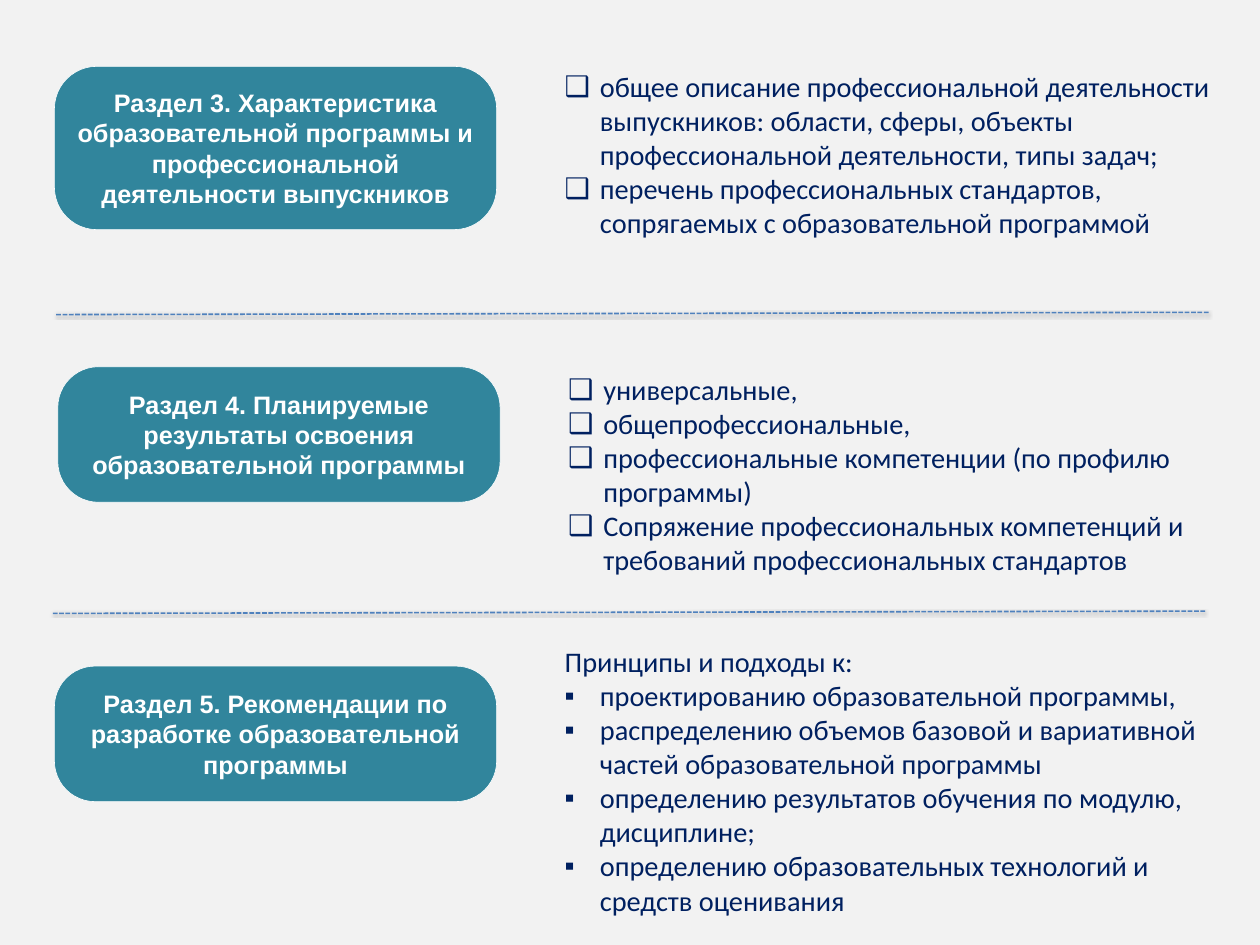
from pptx import Presentation
from pptx.dml.color import RGBColor
from pptx.enum.dml import MSO_LINE_DASH_STYLE as Dash
from pptx.enum.shapes import MSO_CONNECTOR as Connector, MSO_SHAPE as Shape
from pptx.enum.text import MSO_ANCHOR as Anchor, MSO_AUTO_SIZE as AutoSize, PP_ALIGN as Align
from pptx.oxml import parse_xml
from pptx.oxml.ns import nsdecls
from pptx.util import Inches, Pt

WIDTH, HEIGHT = Inches(22.22), Inches(16.67)
CARD_WIDTH, LIST_OFFSET = 35.1, 40.05
LINE_WIDTH, LINE_RISE = 91.5, 0.24
INDENT = Inches(0.62)

SECTIONS = [
    dict(
        title="Раздел 3. Характеристика образовательной программы и "
              "профессиональной деятельности выпускников",
        left=4.32, card_top=7.02, card_height=17.28, corner=0.26,
        holder=1, list_top=7.02, list_width=52.12, list_height=22.44,
        bullet="❑", intro=None,
        items=[
            "общее описание профессиональной деятельности выпускников: области, "
            "сферы, объекты профессиональной деятельности, типы задач;",
            "перечень профессиональных стандартов, сопрягаемых с образовательной программой",
        ],
    ),
    dict(
        title="Раздел 4. Планируемые результаты освоения образовательной программы",
        left=4.59, card_top=38.81, card_height=14.34, corner=0.3,
        holder=2, list_top=39.11, list_width=53.51, list_height=22.44,
        bullet="❑", intro=None,
        items=[
            "универсальные,",
            "общепрофессиональные,",
            "профессиональные компетенции (по профилю программы)",
            "Сопряжение профессиональных компетенций и требований профессиональных стандартов",
        ],
    ),
    dict(
        title="Раздел 5. Рекомендации по разработке образовательной программы",
        left=4.32, card_top=70.49, card_height=14.34, corner=0.3,
        holder=4, list_top=67.91, list_width=53.51, list_height=29.69,
        bullet="▪", intro="Принципы и подходы к:",
        items=[
            "проектированию образовательной программы,",
            "распределению объемов базовой и вариативной частей образовательной программы",
            "определению результатов обучения по модулю, дисциплине;",
            "определению образовательных технологий и средств оценивания",
        ],
    ),
]
DIVIDERS = [(4.46, 33.29), (4.19, 64.91)]


def across(share):
    return round(WIDTH * share / 100)


def down(share):
    return round(HEIGHT * share / 100)


def paint(color_format, color):
    color_format.rgb = RGBColor.from_string(color)


def fill_solid(fill, color):
    fill.solid()
    paint(fill.fore_color, color)


def add_text(para, text, font_name, size, color, bold):
    span = para.add_run()
    span.text = text
    span.font.name = font_name
    span.font.size = Pt(size)
    span.font.bold = bold
    paint(span.font.color, color)


def set_bullet(para, bullet):
    properties = para._p.get_or_add_pPr()
    properties.set("marL", str(INDENT if bullet else 0))
    properties.set("indent", str(-INDENT if bullet else 0))
    mark = f'a:buChar {nsdecls("a")} char="{bullet}"' if bullet else f'a:buNone {nsdecls("a")}'
    para.space_before = Pt(0)
    properties.append(parse_xml(f"<{mark}/>"))


def add_card(page, section):
    card = page.shapes.add_shape(
        Shape.ROUNDED_RECTANGLE, across(section["left"]), down(section["card_top"]),
        across(CARD_WIDTH), down(section["card_height"]))
    card.adjustments[0] = section["corner"]
    card.shadow.inherit = False
    fill_solid(card.fill, "31859C")
    fill_solid(card.line.fill, "FFFFFF")
    card.line.width = Pt(0.75)
    frame = card.text_frame
    frame.word_wrap = True
    frame.vertical_anchor = Anchor.MIDDLE
    para = frame.paragraphs[0]
    para.alignment = Align.CENTER
    add_text(para, section["title"], "Arial", 32, "FFFFFF", True)


def fill_list(page, section):
    box = page.placeholders[section["holder"]]
    box.left, box.top = across(section["left"] + LIST_OFFSET), down(section["list_top"])
    box.width, box.height = across(section["list_width"]), down(section["list_height"])
    frame = box.text_frame
    frame.word_wrap = True
    frame.auto_size = AutoSize.SHAPE_TO_FIT_TEXT
    frame.vertical_anchor = Anchor.TOP
    lines = [(section["bullet"], item) for item in section["items"]]
    if section["intro"]:
        lines.insert(0, (None, section["intro"]))
    for number, (bullet, text) in enumerate(lines):
        para = frame.add_paragraph() if number else frame.paragraphs[0]
        set_bullet(para, bullet)
        add_text(para, text, "Calibri", 36, "002060", False)


def add_divider(page, left, top):
    divider = page.shapes.add_connector(
        Connector.STRAIGHT, across(left), down(top),
        across(left + LINE_WIDTH), down(top - LINE_RISE))
    paint(divider.line.color, "4F81BD")
    divider.line.width = Pt(2)
    divider.line.dash_style = Dash.SQUARE_DOT
    divider._element.spPr.append(parse_xml(
        f'<a:effectLst {nsdecls("a")}>'
        f'<a:outerShdw blurRad="{Pt(3.1)}" dist="{Pt(1.6)}" dir="5400000" rotWithShape="0">'
        '<a:srgbClr val="000000"><a:alpha val="38000"/></a:srgbClr>'
        '</a:outerShdw></a:effectLst>'))


def remove_empty_placeholders(page):
    for holder in list(page.placeholders):
        if not holder.text_frame.text:
            holder._element.getparent().remove(holder._element)


def main():
    deck = Presentation()
    deck.slide_width, deck.slide_height = WIDTH, HEIGHT
    page = deck.slides.add_slide(deck.slide_layouts.get_by_name("Comparison"))
    fill_solid(page.background.fill, "F2F2F2")
    for section in SECTIONS:
        add_card(page, section)
        fill_list(page, section)
    for left, top in DIVIDERS:
        add_divider(page, left, top)
    remove_empty_placeholders(page)
    deck.save("out.pptx")


if __name__ == "__main__":
    main()
